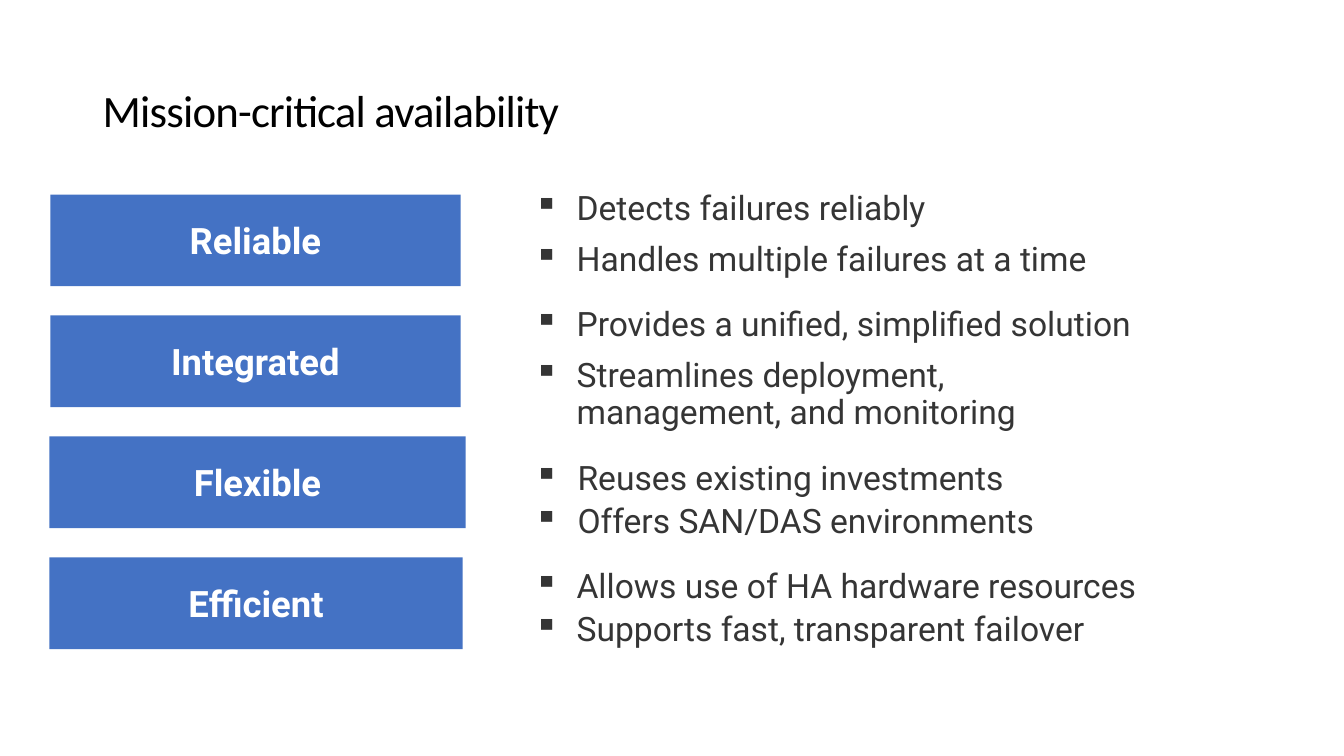
import pptx
import pptx.dml.color
import pptx.enum.shapes
import pptx.enum.text
import pptx.oxml
import pptx.oxml.ns
import pptx.util

BLACK = pptx.dml.color.RGBColor(0x00, 0x00, 0x00)
WHITE = pptx.dml.color.RGBColor(0xFF, 0xFF, 0xFF)
BLUE = pptx.dml.color.RGBColor(0x44, 0x72, 0xC4)
CHARCOAL = pptx.dml.color.RGBColor(0x35, 0x35, 0x35)

EMU_PER_PX = 9144  # 100 px to the inch
MIDDLE = pptx.enum.text.MSO_ANCHOR.MIDDLE
TOP = pptx.enum.text.MSO_ANCHOR.TOP

TITLE_FONT = {"name": "Calibri", "size": pptx.util.Pt(32), "color": BLACK}
LABEL_FONT = {"name": "Roboto", "size": pptx.util.Pt(26), "bold": True, "color": WHITE}
BULLET_FONT = {"name": "Roboto", "size": pptx.util.Pt(24), "color": CHARCOAL}

LABEL_TOP, LABEL_PITCH, LABEL_HEIGHT = 193, 120, 91
BULLET_LEFT = 520

# label, label left and width, bullets top, width, height, indent, space after, bullets
QUALITIES = [
    ("Reliable", 50, 407, 185, 609, 100, 42, 6,
     ["Detects failures reliably", "Handles multiple failures at a time"]),
    ("Integrated", 50, 407, 300, 631, 142, 42, 6,
     ["Provides a unified, simplified solution",
      "Streamlines deployment, management, and monitoring"]),
    ("Flexible", 49, 413, 453, 609, 91, 43, 0,
     ["Reuses existing investments", "Offers SAN/DAS environments"]),
    ("Efficient", 49, 410, 560, 622, 91, 42, 0,
     ["Allows use of HA hardware resources", "Supports fast, transparent failover"]),
]


def px(length):
    return pptx.util.Emu(length * EMU_PER_PX)


class SlideBuilder:
    def __init__(self, presentation):
        self.slide = presentation.slides.add_slide(presentation.slide_layouts[6])

    def add_text(self, paragraph, text, font_values, paragraph_values):
        run = paragraph.add_run()
        run.text = text
        for name, value in font_values.items():
            if name == "color":
                run.font.color.rgb = value
            else:
                setattr(run.font, name, value)
        for name, value in paragraph_values.items():
            setattr(paragraph, name, value)
        return run

    def text_frame(self, left, top, width, height, anchor):
        shape = self.slide.shapes.add_textbox(px(left), px(top), px(width), px(height))
        frame = shape.text_frame
        frame.word_wrap = True
        frame.vertical_anchor = anchor
        return frame

    def title(self, text, left, top, width, height):
        frame = self.text_frame(left, top, width, height, MIDDLE)
        run = self.add_text(frame.paragraphs[0], text, TITLE_FONT, {"line_spacing": 0.9})
        run._r.get_or_add_rPr().set("spc", "-60")

    def label(self, text, left, top, width, height):
        shape = self.slide.shapes.add_shape(
            pptx.enum.shapes.MSO_SHAPE.RECTANGLE, px(left), px(top), px(width), px(height))
        shape.shadow.inherit = False
        shape.fill.solid()
        shape.fill.fore_color.rgb = BLUE
        shape.line.fill.background()
        shape.text_frame.word_wrap = True
        shape.text_frame.vertical_anchor = MIDDLE
        self.add_text(shape.text_frame.paragraphs[0], text, LABEL_FONT,
                      {"alignment": pptx.enum.text.PP_ALIGN.CENTER})

    def bullets(self, lines, left, top, width, height, indent, space_after):
        frame = self.text_frame(left, top, width, height, TOP)
        values = {"line_spacing": 0.9, "space_before": pptx.util.Pt(4.8),
                  "space_after": pptx.util.Pt(space_after)}
        for index, line in enumerate(lines):
            paragraph = frame.add_paragraph() if index else frame.paragraphs[0]
            self.add_text(paragraph, line, BULLET_FONT, values)
            properties = paragraph._p.get_or_add_pPr()
            properties.set("marL", str(px(indent)))
            properties.set("indent", str(-px(indent)))
            properties.append(pptx.oxml.parse_xml(
                f'<a:buChar {pptx.oxml.ns.nsdecls("a")} char="▪"/>'))


def main():
    presentation = pptx.Presentation()
    presentation.slide_width = px(1333)
    presentation.slide_height = px(750)
    builder = SlideBuilder(presentation)

    # Heading
    builder.title("Mission-critical availability", 92, 40, 1150, 145)

    # One label with its bullets for each quality
    for row, quality in enumerate(QUALITIES):
        name, left, label_width, top, width, height, indent, space_after, lines = quality
        builder.label(name, left, LABEL_TOP + row * LABEL_PITCH, label_width, LABEL_HEIGHT)
        builder.bullets(lines, BULLET_LEFT, top, width, height, indent, space_after)

    presentation.save("out.pptx")


if __name__ == "__main__":
    main()
